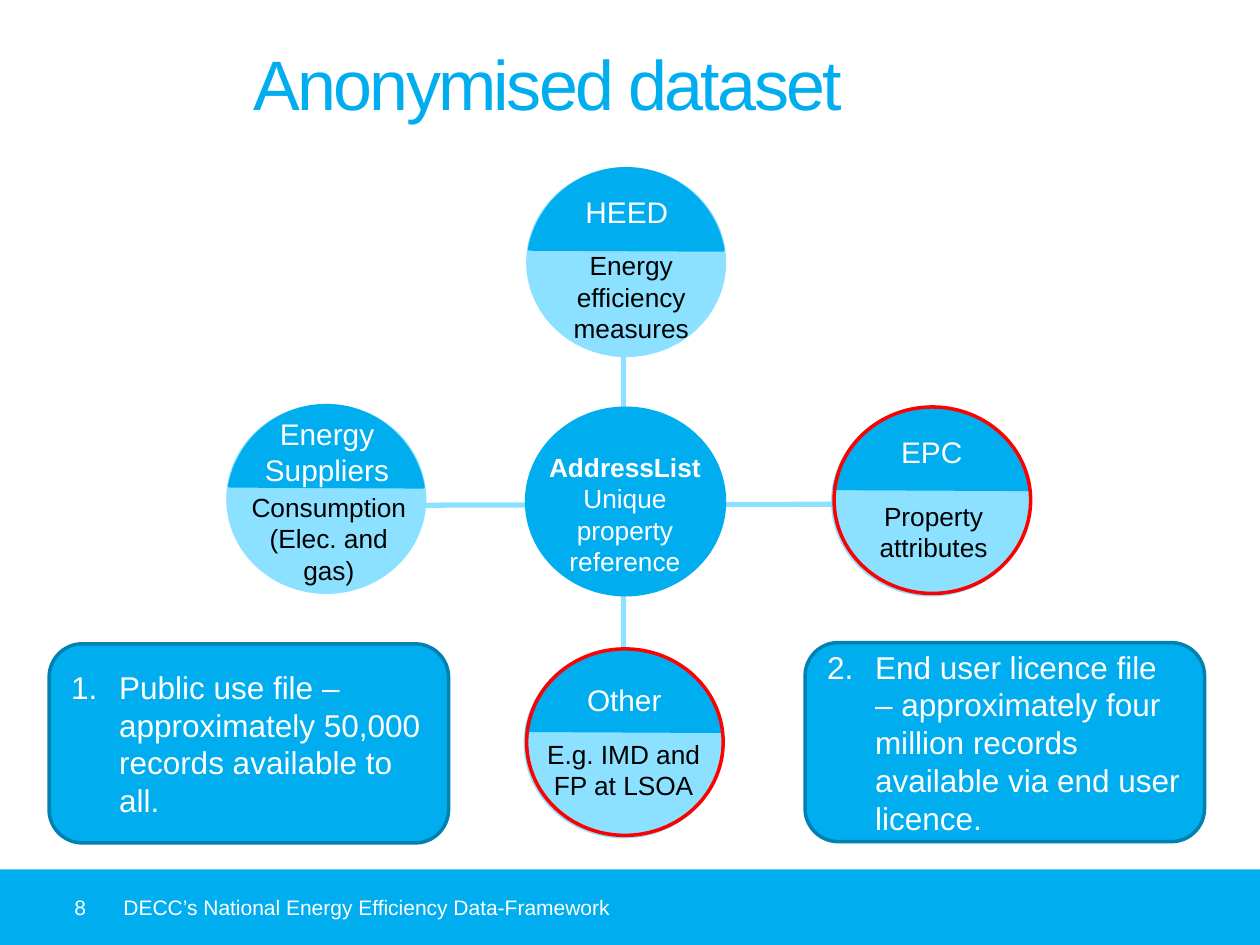
from lxml.etree import SubElement
from pptx import Presentation
from pptx.dml.color import RGBColor
from pptx.enum.shapes import MSO_CONNECTOR, MSO_SHAPE
from pptx.enum.text import MSO_ANCHOR, PP_ALIGN
from pptx.oxml.ns import qn
from pptx.util import Inches, Pt

# The slide is a grid of 100 columns by 75 rows
COLUMNS, ROWS = 100, 75
WIDTH, HEIGHT = Inches(10), Inches(7.5)

BLUE, PALE, EDGE = "00AEEF", "8BE1FF", "0081B1"
RED, WHITE, BLACK = "FF0000", "FFFFFF", "000000"

CIRCLE_W, CIRCLE_H = 15.6, 14.8
CHORD_ANGLES = (114.365, 209.99)
RING_OFFSET = 0.1

HEADING = {"size": Pt(17), "color": WHITE}
DETAIL = {"size": Pt(15), "color": BLACK}
FOOTER = {"size": Pt(12), "color": WHITE}

# left, top, heading, heading drop, detail, detail offset (x, y), detail width, ringed
SOURCES = [
    (18.1, 32.2, "Energy Suppliers", 0.3, "Consumption (Elec. and gas)", (0.2, 6.3), 15.6, False),
    (41.7, 51.6, "Other", 2, "E.g. IMD and FP at LSOA", (0, 6.5), 15.6, True),
    (66.1, 32.4, "EPC", 1.5, "Property attributes", (0.2, 6.8), 15.6, True),
    (41.9, 13.4, "HEED", 1.5, "Energy efficiency measures", (0, 5.9), 16.4, False),
]

# left, top, number, text
FILES = [
    (3.9, 51.1, 1, "Public use file – approximately 50,000 records available to all."),
    (63.9, 51, 2, "End user licence file – approximately four million records available via end user licence."),
]


def col(count):
    return round(WIDTH * count / COLUMNS)


def row(count):
    return round(HEIGHT * count / ROWS)


def place(left, top, width, height):
    return col(left), row(top), col(width), row(height)


def color(hex_code):
    return RGBColor.from_string(hex_code)


def set_format(font, values):
    for name, value in {"name": "Arial", **values}.items():
        if name == "color":
            font.color.rgb = color(value)
        else:
            setattr(font, name, value)


def write(frame, lines, align=PP_ALIGN.CENTER, anchor=MSO_ANCHOR.TOP, margins=None):
    """Fill a frame with (text, format) lines, one paragraph each."""
    frame.word_wrap = True
    frame.vertical_anchor = anchor
    for side, size in (margins or {}).items():
        setattr(frame, f"margin_{side}", size)
    for index, (text, values) in enumerate(lines):
        paragraph = frame.add_paragraph() if index else frame.paragraphs[0]
        paragraph.alignment = align
        run = paragraph.add_run()
        run.text = text
        set_format(run.font, values)


def add_label(slide, area, lines, **layout):
    label = slide.shapes.add_textbox(*place(*area))
    write(label.text_frame, lines, **layout)
    return label


def add_figure(slide, kind, area, fill=None, line=None):
    figure = slide.shapes.add_shape(kind, *place(*area))
    figure.shadow.inherit = False
    if fill:
        figure.fill.solid()
        figure.fill.fore_color.rgb = color(fill)
    else:
        figure.fill.background()
    if line:
        figure.line.color.rgb = color(line)
        figure.line.width = Pt(2)
    else:
        figure.line.fill.background()
    return figure


def add_link(slide, start, end):
    link = slide.shapes.add_connector(
        MSO_CONNECTOR.STRAIGHT, col(start[0]), row(start[1]), col(end[0]), row(end[1]))
    link.line.color.rgb = color(PALE)
    link.line.width = Pt(3)
    SubElement(link._element.spPr, qn("a:effectLst"))


def indent(paragraph, left, first=0):
    properties = paragraph._p.get_or_add_pPr()
    properties.set("marL", str(left))
    properties.set("indent", str(first))
    return properties


def add_source(slide, left, top, heading, drop, detail, offset, detail_width, ringed):
    add_figure(slide, MSO_SHAPE.FLOWCHART_CONNECTOR, (left, top, CIRCLE_W, CIRCLE_H), PALE, PALE)
    cap = add_figure(slide, MSO_SHAPE.CHORD, (left, top, CIRCLE_W, CIRCLE_W), BLUE, BLUE)
    for index, angle in enumerate(CHORD_ANGLES):
        cap.adjustments[index] = angle
    add_label(slide, (left + 0.8, top + drop, 14.1, 3.9), [(heading, HEADING)])
    dx, dy = offset
    add_label(slide, (left + dx, top + dy, detail_width, 8.6), [(detail, DETAIL)])
    if ringed:
        ring = (left + RING_OFFSET, top - RING_OFFSET, CIRCLE_W, CIRCLE_H)
        add_figure(slide, MSO_SHAPE.FLOWCHART_CONNECTOR, ring, line=RED)


def add_file(slide, left, top, number, text):
    card = add_figure(slide, MSO_SHAPE.ROUNDED_RECTANGLE, (left, top, 31.7, 15.8), BLUE, EDGE)
    frame = card.text_frame
    properties = indent(frame.paragraphs[0], col(3.8), -col(3.8))
    SubElement(properties, qn("a:buFont"), typeface="+mj-lt")
    SubElement(properties, qn("a:buAutoNum"), type="arabicPeriod", startAt=str(number))
    write(frame, [(text, {"size": Pt(18), "color": WHITE})], PP_ALIGN.LEFT, MSO_ANCHOR.MIDDLE)


def main():
    deck = Presentation()
    deck.slide_width, deck.slide_height = WIDTH, HEIGHT
    slide = deck.slides.add_slide(deck.slide_layouts[6])
    flush = dict.fromkeys(("left", "top", "right", "bottom"), 0)

    # Title
    title = add_label(slide, (20.1, 3.2, 71.8, 8.7),
                      [("Anonymised dataset", {"size": Pt(40), "color": BLUE})],
                      align=PP_ALIGN.LEFT, margins=flush)
    title.text_frame.paragraphs[0].runs[0].font._element.set("spc", "-150")

    # Footer
    band = add_figure(slide, MSO_SHAPE.RECTANGLE, (0, 69, 100, 6), BLUE)
    footer_layout = {"align": PP_ALIGN.LEFT, "anchor": MSO_ANCHOR.MIDDLE, "margins": flush}
    write(band.text_frame, [("8", FOOTER)], **footer_layout)
    indent(band.text_frame.paragraphs[0], col(5.9))
    add_label(slide, (9.8, 69, 84.3, 6),
              [("DECC’s National Energy Efficiency Data-Framework", FOOTER)], **footer_layout)

    # Links, behind the circles
    add_link(slide, (30.8, 40.1), (76.8, 40))
    add_link(slide, (49.5, 23.6), (49.5, 60.3))

    # Hub
    add_figure(slide, MSO_SHAPE.FLOWCHART_CONNECTOR, (41.8, 32.4, 15.7, CIRCLE_H), BLUE, BLUE)
    hub_text = {**DETAIL, "color": WHITE}
    add_label(slide, (41.8, 35.3, 15.6, 11.1),
              [("AddressList", {**hub_text, "bold": True}),
               ("Unique property reference", hub_text)])

    # Data sources around the hub
    for source in SOURCES:
        add_source(slide, *source)

    # Published files
    for file in FILES:
        add_file(slide, *file)

    deck.save("out.pptx")


if __name__ == "__main__":
    main()
